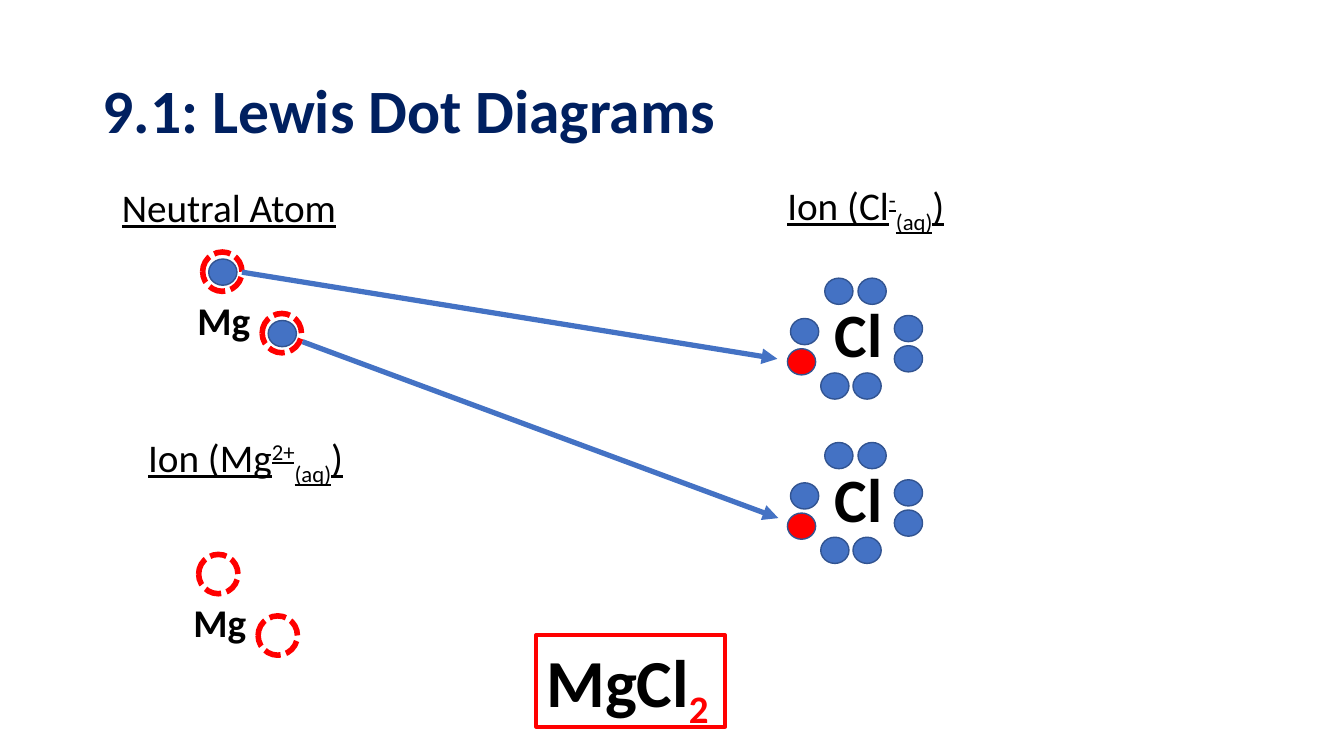
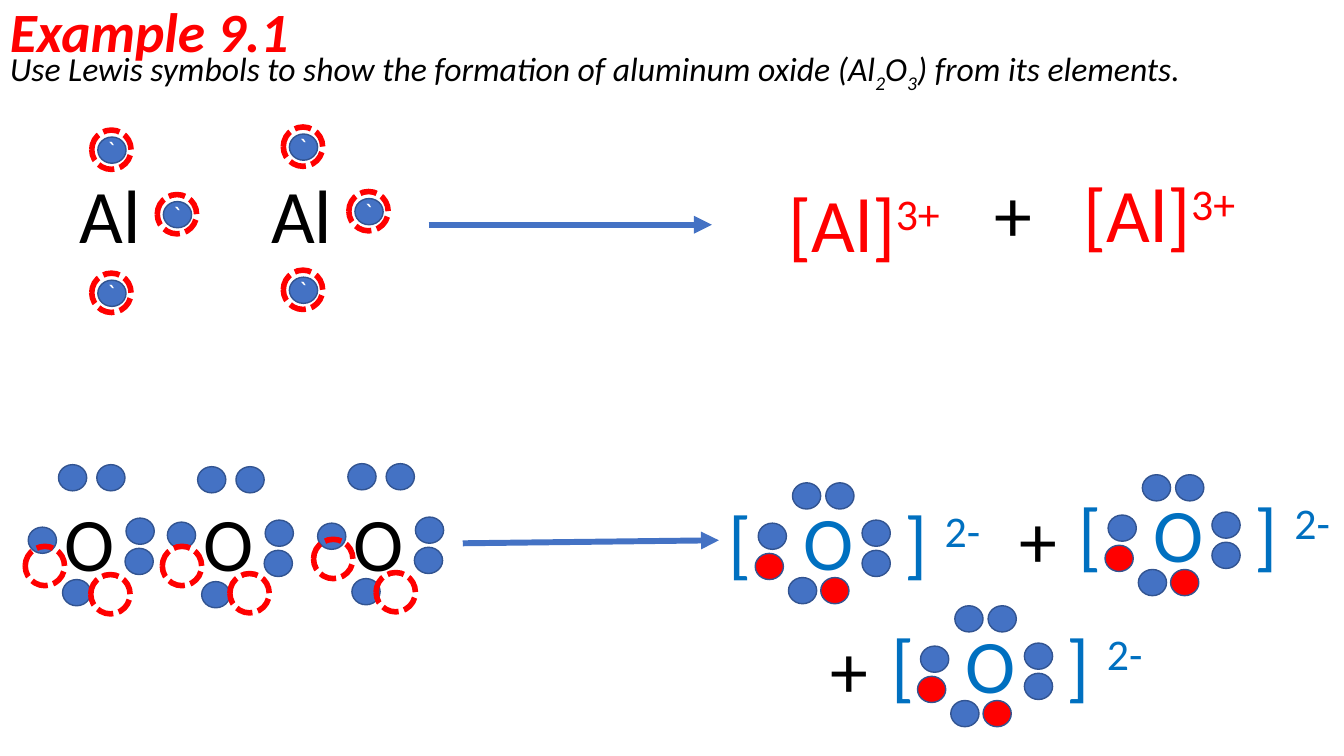
"""Build two slides of Lewis dot diagrams for ionic compounds."""
from dataclasses import dataclass
from typing import NamedTuple

from lxml import etree
from pptx import Presentation
from pptx.dml.color import RGBColor
from pptx.enum.dml import MSO_LINE
from pptx.enum.shapes import MSO_CONNECTOR, MSO_SHAPE
from pptx.enum.text import MSO_ANCHOR, PP_ALIGN
from pptx.oxml.ns import qn
from pptx.shapes.autoshape import Shape
from pptx.slide import Slide
from pptx.util import Inches, Pt

OVAL = MSO_SHAPE.OVAL
STRAIGHT = MSO_CONNECTOR.STRAIGHT
DASH = MSO_LINE.SQUARE_DOT
TOP, MIDDLE = MSO_ANCHOR.TOP, MSO_ANCHOR.MIDDLE
CENTER = PP_ALIGN.CENTER


@dataclass(frozen=True)
class Theme:
    """Colours, font and type sizes of the deck."""
    font: str = "Calibri"
    navy: str = "002060"
    black: str = "000000"
    white: str = "FFFFFF"
    red: str = "FF0000"
    blue: str = "4472C4"
    edge: str = "325491"
    sky: str = "0070C0"
    title: float = 44
    lead: float = 39.6
    body: float = 28
    task: float = 24
    tick: float = 18
    sum: float = 48
    big: float = 54


THEME = Theme()


class Point(NamedTuple):
    """A place in inches."""
    x: float
    y: float

    def move(self, x: float, y: float) -> "Point":
        """Return the place shifted by x and y."""
        return Point(self.x + x, self.y + y)


class Part(NamedTuple):
    """A piece of text with its baseline shift in percent."""
    text: str
    base: int = 0
    color: str = ""


@dataclass(frozen=True)
class Style:
    """Looks of a line of text."""
    size: float
    color: str = THEME.black
    bold: bool = False
    slant: bool = False
    under: bool = False


@dataclass(frozen=True)
class Oxide:
    """A neutral oxygen atom: origin, left dot and vacated places."""
    at: Point
    left: float
    rings: tuple[Point, Point]


TITLE = Style(THEME.title, THEME.navy, bold=True)
LEAD = Style(THEME.lead, THEME.red, bold=True, slant=True)
TASK = Style(THEME.task, slant=True)
HEAD = Style(THEME.body, under=True)
METAL = Style(THEME.body, bold=True)
HALIDE = Style(THEME.title, bold=True)
RESULT = Style(THEME.sum, bold=True)
BIG = Style(THEME.big)
CATION = Style(THEME.big, THEME.red)
ANION = Style(THEME.big, THEME.sky)

DOT_W, DOT_H, RING = 0.28, 0.26, 0.39
OCTET = (Point(0.37, 0), Point(0.7, 0), Point(1.06, 0.37), Point(1.06, 0.67),
         Point(0.33, 0.94), Point(0.03, 0.4), Point(0.65, 0.94), Point(0, 0.7))
SHELL = (Point(0.3, 0), Point(0.68, 0), Point(0.96, 0.83),
         Point(0.97, 0.53), Point(0.34, 1.14))
TRIO = (Point(0, 0), Point(0, 1.42), Point(0.65, 0.64))
PAIR = (Point(0.15, -0.39), Point(0.74, 0.22))
OXIDES = (
    Oxide(Point(0.28, 4.61), 0.62, (Point(0.62, 1.09), Point(-0.03, 0.81))),
    Oxide(Point(1.66, 4.63), 0.55, (Point(0.62, 1.06), Point(-0.05, 0.79))),
    Oxide(Point(3.15, 4.6), 0.59, (Point(0.58, 1.08), Point(-0.04, 0.75))),
)


def rgb(code: str) -> RGBColor:
    """Turn a hex code into a colour."""
    return RGBColor.from_string(code)


def write(slide: Slide, at: Point, width: float, height: float, style: Style,
          *parts: Part, anchor: MSO_ANCHOR = TOP) -> Shape:
    """Add a line of text made of parts."""
    box = slide.shapes.add_textbox(Inches(at.x), Inches(at.y),
                                   Inches(width), Inches(height))
    frame = box.text_frame
    frame.word_wrap = True
    frame.margin_right = 0
    frame.vertical_anchor = anchor
    for part in parts:
        run = frame.paragraphs[0].add_run()
        run.text = part.text
        font = run.font
        font.name, font.size = THEME.font, Pt(style.size)
        font.bold, font.italic = style.bold, style.slant
        font.underline = style.under
        font.color.rgb = rgb(part.color or style.color)
        if part.base:
            run._r.get_or_add_rPr().set("baseline", str(part.base * 1000))
    return box


def title(slide: Slide, at: Point, height: float, style: Style,
          text: str) -> None:
    """Add the title of a slide."""
    box = write(slide, at, 11.5, height, style, Part(text), anchor=MIDDLE)
    box.text_frame.paragraphs[0].line_spacing = 0.9


def dot(slide: Slide, at: Point, color: str = THEME.blue) -> None:
    """Add an electron."""
    oval = slide.shapes.add_shape(OVAL, Inches(at.x), Inches(at.y),
                                  Inches(DOT_W), Inches(DOT_H))
    oval.shadow.inherit = False
    oval.fill.solid()
    oval.fill.fore_color.rgb = rgb(color)
    oval.line.color.rgb = rgb(THEME.edge)
    oval.line.width = Pt(1)


def ring(slide: Slide, at: Point, text: str = "") -> None:
    """Add a dashed ring that marks a lost electron."""
    oval = slide.shapes.add_shape(OVAL, Inches(at.x), Inches(at.y),
                                  Inches(RING), Inches(RING))
    oval.shadow.inherit = False
    oval.fill.background()
    oval.line.color.rgb = rgb(THEME.red)
    oval.line.width = Pt(4)
    oval.line.dash_style = DASH
    if text:
        frame = oval.text_frame
        frame.text = text
        frame.vertical_anchor = MIDDLE
        line = frame.paragraphs[0]
        line.alignment = CENTER
        font = line.runs[0].font
        font.name, font.size = THEME.font, Pt(THEME.tick)
        font.color.rgb = rgb(THEME.white)


def arrow(slide: Slide, start: Point, end: Point, width: float) -> None:
    """Add an arrow from start to end."""
    line = slide.shapes.add_connector(STRAIGHT, Inches(start.x), Inches(start.y),
                                      Inches(end.x), Inches(end.y))
    line.line.color.rgb = rgb(THEME.blue)
    line.line.width = Pt(width)
    props = line._element.spPr
    etree.SubElement(props.find(qn("a:ln")), qn("a:tailEnd"), type="triangle")
    etree.SubElement(props, qn("a:effectLst"))


def octet(slide: Slide, at: Point, gained: int) -> None:
    """Add eight electrons, the last ones gained and red."""
    for rank, spot in enumerate(OCTET):
        new = rank >= len(OCTET) - gained
        dot(slide, at.move(*spot), THEME.red if new else THEME.blue)


def metal(slide: Slide, at: Point, neutral: bool) -> None:
    """Add magnesium with its two outer places."""
    write(slide, at, 0.95, 0.57, METAL, Part("Mg"))
    for spot in PAIR:
        place = at.move(*spot)
        if neutral:
            dot(slide, place.move(0.06, 0.07))
        ring(slide, place)


def halide(slide: Slide, at: Point) -> None:
    """Add a chloride ion."""
    write(slide, at.move(0.37, 0.13), 0.83, 0.84, HALIDE, Part("Cl"))
    octet(slide, at, 1)


def alum(slide: Slide, at: Point) -> None:
    """Add an aluminum atom with three electrons to lose."""
    write(slide, Point(at.x - 0.28, 1.62), 0.84, 1.01, BIG, Part("Al"))
    for spot in TRIO:
        place = at.move(*spot)
        dot(slide, place)
        ring(slide, place.move(-0.06, -0.07), "`")


def oxygen(slide: Slide, atom: Oxide) -> None:
    """Add a neutral oxygen atom."""
    write(slide, Point(atom.at.x + 0.26, 4.87), 0.84, 1.01, BIG, Part("O"))
    for spot in (*SHELL, Point(0, atom.left)):
        dot(slide, atom.at.move(*spot))
    for spot in atom.rings:
        ring(slide, atom.at.move(*spot))


def oxide(slide: Slide, at: Point) -> None:
    """Add an oxide ion in brackets with its charge."""
    marks = ((0, 0.5, Part("[")), (0.74, 0.84, Part("O")),
             (1.74, 0.5, Part("]")), (2.14, 0.59, Part("2-", 30)))
    for shift, width, part in marks:
        write(slide, at.move(shift - 0.36, 0.07), width, 1.01, ANION, part)
    octet(slide, at, 2)


def salt(slide: Slide) -> None:
    """Draw magnesium chloride."""
    title(slide, Point(0.92, 0.4), 1.45, TITLE, "9.1: Lewis Dot Diagrams")
    state = Part("(aq)", -25)
    heads = ((Point(1.11, 1.77), (Part("Neutral Atom"),)),
             (Point(7.71, 1.75),
              (Part("Ion (Cl"), Part("-", 30), state, Part(")"))),
             (Point(1.37, 4.25),
              (Part("Ion (Mg"), Part("2+", 30), state, Part(")"))))
    for at, parts in heads:
        write(slide, at, 2.38, 0.57, HEAD, *parts)
    metal(slide, Point(1.86, 2.89), True)
    metal(slide, Point(1.82, 5.89), False)
    for y in (2.76, 4.39):
        halide(slide, Point(7.81, y))
    arrow(slide, Point(2.4, 2.7), Point(7.71, 3.56), 3.75)
    arrow(slide, Point(3, 3.39), Point(7.72, 5.14), 3.75)
    box = write(slide, Point(5.32, 6.3), 1.87, 0.91, RESULT,
                Part("MgCl"), Part("2", -25, THEME.red))
    box.line.color.rgb = rgb(THEME.red)
    box.line.width = Pt(3)


def alumina(slide: Slide) -> None:
    """Draw aluminum oxide."""
    title(slide, Point(0, -0.01), 0.71, LEAD, "Example 9.1")
    write(slide, Point(0, 0.43), 13.33, 0.5, TASK,
          Part("Use Lewis symbols to show the formation of aluminum oxide (Al"),
          Part("2", -25), Part("O"), Part("3", -25),
          Part(") from its elements."))
    for at in (Point(0.97, 1.36), Point(2.87, 1.33)):
        alum(slide, at)
    for atom in OXIDES:
        oxygen(slide, atom)
    arrow(slide, Point(4.25, 2.23), Point(7.06, 2.23), 4.25)
    arrow(slide, Point(4.59, 5.39), Point(7.13, 5.36), 4.25)
    for at in (Point(7.72, 1.71), Point(10.65, 1.61)):
        write(slide, at, 1.89, 1.01, CATION, Part("[Al]"), Part("3+", 30))
    for at in (Point(9.77, 1.61), Point(10.01, 4.84), Point(8.14, 6.13)):
        write(slide, at, 0.71, 1.01, BIG, Part("+"))
    for at in (Point(7.49, 4.79), Point(10.96, 4.71), Point(9.1, 6.01)):
        oxide(slide, at)


def main() -> None:
    """Build and save the deck."""
    deck = Presentation()
    deck.slide_width, deck.slide_height = Inches(13.33), Inches(7.5)
    for draw in (salt, alumina):
        draw(deck.slides.add_slide(deck.slide_layouts[6]))
    deck.save("out.pptx")


if __name__ == "__main__":
    main()
